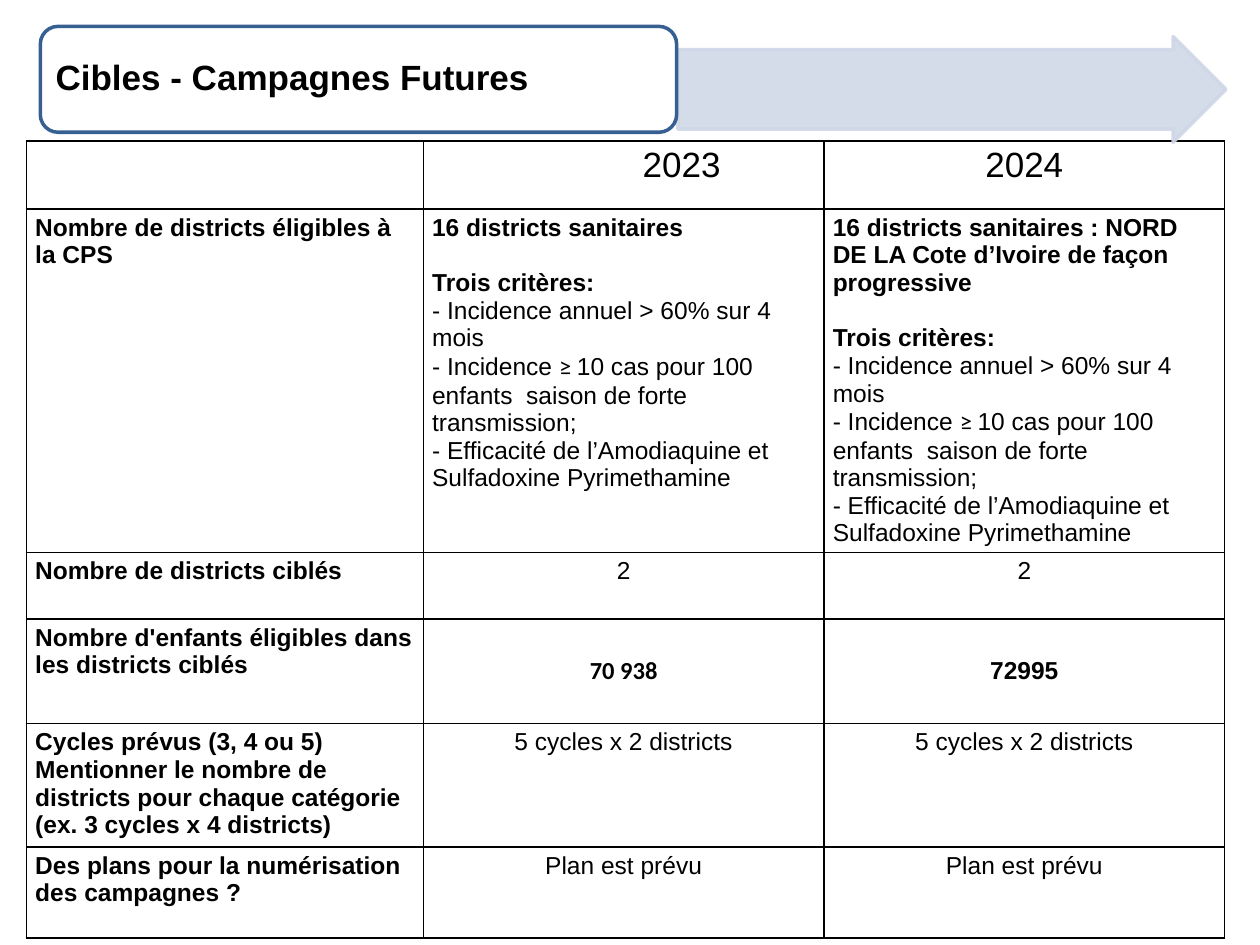
from lxml import etree
from pptx import Presentation
from pptx.dml.color import RGBColor
from pptx.enum.shapes import MSO_SHAPE
from pptx.enum.text import MSO_ANCHOR, PP_ALIGN
from pptx.oxml.ns import qn
from pptx.util import Inches, Pt

ARROW = MSO_SHAPE.RIGHT_ARROW
ROUNDED = MSO_SHAPE.ROUNDED_RECTANGLE
LEFT, CENTER = PP_ALIGN.LEFT, PP_ALIGN.CENTER
TOP, MIDDLE = MSO_ANCHOR.TOP, MSO_ANCHOR.MIDDLE

COLORS = {"text": "000000", "white": "FFFFFF", "arrow": "CFD7E7", "frame": "366092"}
COLUMN_WIDTHS = [3.15, 3.18, 3.18]
ROW_HEIGHTS = [0.54, 2.25, 0.53, 0.83, 0.98, 0.72]
YEARS = ["2023", "2024"]
YEAR_INSETS = [0.99, 0.07]
DISTRICTS = [
    "16 districts sanitaires",
    "16 districts sanitaires : NORD DE LA Cote d’Ivoire de façon progressive",
]
CRITERIA = [
    [("- Incidence annuel > 60% sur 4 mois", "Arial")],
    [
        ("- Incidence ", "Arial"),
        ("≥ ", "Calibri"),
        ("10 cas pour 100 enfants  saison de forte transmission;", "Arial"),
    ],
    [("- Efficacité de l’Amodiaquine et Sulfadoxine Pyrimethamine", "Arial")],
]
LABELS = [
    "Nombre de districts éligibles à la CPS",
    "Nombre de districts ciblés",
    "Nombre d'enfants éligibles dans les districts ciblés",
    "Cycles prévus (3, 4 ou 5) Mentionner le nombre de districts pour chaque "
    "catégorie (ex. 3 cycles x 4 districts)",
    "Des plans pour la numérisation des campagnes ?",
]
# Table row: same answer for both years
ANSWERS = {2: "2", 4: "5 cycles x 2 districts", 5: "Plan est prévu"}
CHILDREN = [("70 938", "Calibri"), ("72995", "Arial")]


def rgb(name):
    return RGBColor.from_string(COLORS[name])


def add_run(paragraph, text, size=14, bold=False, font="Arial"):
    run = paragraph.add_run()
    run.text = text
    run.font.name = font
    run.font.size = Pt(size)
    run.font.bold = bold
    run.font.color.rgb = rgb("text")


def set_transparency(shape, percent):
    """Give the fill and the line of a shape the same opacity."""
    for color in shape._element.spPr.iter(qn("a:srgbClr")):
        etree.SubElement(color, qn("a:alpha"), val=str(percent * 1000))


def add_box(slide, preset, position, fill, line):
    shape = slide.shapes.add_shape(preset, *map(Inches, position))
    shape.shadow.inherit = False
    shape.fill.solid()
    shape.fill.fore_color.rgb = rgb(fill)
    shape.line.color.rgb = rgb(line)
    shape.line.width = Pt(2)
    return shape


def add_banner(slide):
    arrow = add_box(slide, ARROW, (5.38, 0.29, 4.35, 0.84), "arrow", "arrow")
    arrow.adjustments[0] = 0.75
    set_transparency(arrow, 89)

    title = add_box(slide, ROUNDED, (0.32, 0.21, 5.05, 0.84), "white", "frame")
    frame = title.text_frame
    frame.word_wrap = True
    frame.vertical_anchor = MIDDLE
    frame.margin_left = frame.margin_right = Inches(0.08)
    frame.margin_top = frame.margin_bottom = Inches(0.04)
    paragraph = frame.paragraphs[0]
    paragraph.alignment = LEFT
    paragraph.line_spacing = 0.9
    add_run(paragraph, "Cibles - Campagnes Futures", 20, bold=True)


def format_cell(cell):
    cell.fill.background()
    cell.margin_left = cell.margin_right = Inches(0.07)
    cell.margin_top = cell.margin_bottom = Inches(0.04)
    properties = cell._tc.get_or_add_tcPr()
    for index, side in enumerate(("lnL", "lnR", "lnT", "lnB")):
        border = etree.Element(qn(f"a:{side}"), w=str(Pt(1)))
        fill = etree.SubElement(border, qn("a:solidFill"))
        etree.SubElement(fill, qn("a:srgbClr"), val=COLORS["text"])
        properties.insert(index, border)


def write_cell(cell, text, size=14, bold=False, font="Arial", align=CENTER, anchor=TOP):
    cell.vertical_anchor = anchor
    paragraph = cell.text_frame.paragraphs[0]
    paragraph.alignment = align
    add_run(paragraph, text, size, bold, font)


def write_criteria(cell, districts):
    write_cell(cell, districts, bold=True, align=LEFT)
    heading = cell.text_frame.add_paragraph()
    heading.space_before = Pt(16)
    add_run(heading, "Trois critères:", bold=True)
    for criterion in CRITERIA:
        paragraph = cell.text_frame.add_paragraph()
        for text, font in criterion:
            add_run(paragraph, text, font=font)


def add_targets_table(slide):
    table = slide.shapes.add_table(
        len(ROW_HEIGHTS), len(COLUMN_WIDTHS), Inches(0.21), Inches(1.12),
        Inches(sum(COLUMN_WIDTHS)), Inches(sum(ROW_HEIGHTS)),
    ).table
    table.first_row = table.horz_banding = False
    for column, width in zip(table.columns, COLUMN_WIDTHS):
        column.width = Inches(width)
    for row, height in zip(table.rows, ROW_HEIGHTS):
        row.height = Inches(height)
    for cell in table.iter_cells():
        format_cell(cell)

    for row, label in enumerate(LABELS, start=1):
        write_cell(table.cell(row, 0), label, bold=True, align=LEFT)
    for column, year in enumerate(YEARS, start=1):
        heading = table.cell(0, column)
        heading.margin_left = Inches(YEAR_INSETS[column - 1])
        write_cell(heading, year, 20)
        write_criteria(table.cell(1, column), DISTRICTS[column - 1])
        children, font = CHILDREN[column - 1]
        write_cell(table.cell(3, column), children, bold=True, font=font, anchor=MIDDLE)
        for row, answer in ANSWERS.items():
            write_cell(table.cell(row, column), answer)


def main():
    presentation = Presentation()
    presentation.slide_width = Inches(10)
    presentation.slide_height = Inches(7.5)
    slide = presentation.slides.add_slide(presentation.slide_layouts[6])
    add_targets_table(slide)
    add_banner(slide)
    presentation.save("out.pptx")


if __name__ == "__main__":
    main()
